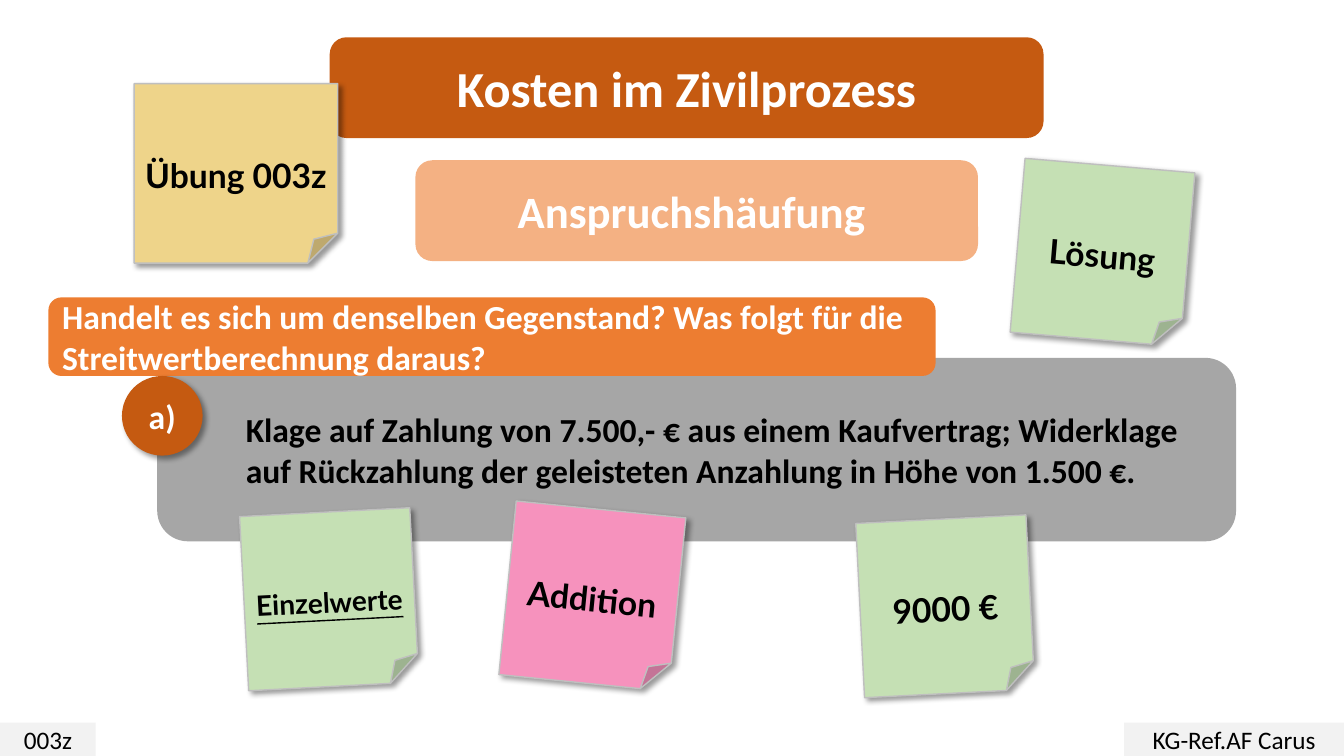
"""Build the slide on litigation costs and joined claims."""
from dataclasses import dataclass

from lxml import etree
from pptx import Presentation
from pptx.dml.color import RGBColor
from pptx.enum import shapes, text
from pptx.oxml import ns
from pptx.util import Inches, Pt


@dataclass(frozen=True)
class Theme:
    white: str = "FFFFFF"
    black: str = "000000"
    rust: str = "C55A11"
    peach: str = "F4B183"
    orange: str = "ED7D31"
    grey: str = "A6A6A6"
    footer: str = "F2F2F2"
    edge: str = "BFBFBF"
    yellow: str = "EED48A"
    green: str = "C5E0B4"
    pink: str = "F692BD"
    body_font: str = "Calibri"
    note_font: str = "Lato"
    title: int = 36
    subtitle: int = 32
    body: int = 24
    small: int = 20
    footnote: int = 18


theme = Theme()
kinds = shapes.MSO_SHAPE
center, left_align = text.PP_ALIGN.CENTER, text.PP_ALIGN.LEFT

presentation = Presentation()
presentation.slide_width, presentation.slide_height = Inches(13.33), Inches(7.5)
slide = presentation.slides.add_slide(presentation.slide_layouts[6])


def add_label(kind, box, fill, words, size, color, bold=True, align=center, font=theme.body_font):
    shape = slide.shapes.add_shape(kind, *map(Inches, box))
    shape.shadow.inherit = False
    shape.fill.solid()
    shape.fill.fore_color.rgb = RGBColor.from_string(fill)
    shape.line.fill.background()
    frame = shape.text_frame
    frame.word_wrap = True
    frame.vertical_anchor = text.MSO_ANCHOR.MIDDLE
    frame.text = words
    paragraph = frame.paragraphs[0]
    paragraph.alignment = align
    run_font = paragraph.runs[0].font
    run_font.name, run_font.size, run_font.bold = font, Pt(size), bold
    run_font.color.rgb = RGBColor.from_string(color)
    return shape


def add_shadow(shape):
    effects = shape._element.spPr.find(ns.qn("a:effectLst"))
    shadow = etree.SubElement(effects, ns.qn("a:outerShdw"), blurRad=str(Pt(4)),
                              dist=str(Pt(3)), dir="2700000", algn="tl", rotWithShape="0")
    color = etree.SubElement(shadow, ns.qn("a:srgbClr"), val=theme.black)
    etree.SubElement(color, ns.qn("a:alpha"), val="40000")


case = add_label(kinds.ROUNDED_RECTANGLE, (1.56, 3.55, 10.7, 1.82), theme.grey,
                 "Klage auf Zahlung von 7.500,- € aus einem Kaufvertrag; Widerklage auf "
                 "Rückzahlung der geleisteten Anzahlung in Höhe von 1.500 €.",
                 theme.body, theme.black, align=left_align)
case.text_frame.margin_left = Inches(0.79)

add_label(kinds.ROUNDED_RECTANGLE, (3.27, 0.37, 7.08, 1), theme.rust,
          "Kosten im Zivilprozess", theme.title, theme.white)
add_label(kinds.ROUNDED_RECTANGLE, (4.12, 1.59, 5.58, 1), theme.peach,
          "Anspruchshäufung ", theme.subtitle, theme.white)
add_label(kinds.ROUNDED_RECTANGLE, (0.48, 2.95, 8.8, 0.78), theme.orange,
          "Handelt es sich um denselben Gegenstand? Was folgt für die "
          "Streitwertberechnung daraus?", theme.body, theme.white, align=left_align)

for left, width, words in [(0, 0.95, "003z"), (11.15, 2.18, "KG-Ref.AF Carus")]:
    add_label(kinds.RECTANGLE, (left, 7.17, width, 0.33), theme.footer,
              words, theme.footnote, theme.black, bold=False)

badge = add_label(kinds.OVAL, (1.21, 3.73, 0.8, 0.79), theme.rust,
                  "a)", theme.body, theme.white)
add_shadow(badge)

note_size = (1.69, 1.73)
notes = [
    ("Übung 003z", (1.33, 0.83, 2.02, 1.78), 0, theme.yellow, theme.body),
    ("Lösung", (10.09, 1.64, *note_size), 4.9, theme.green, theme.body),
    ("Einzelwerte", (2.42, 5.08, *note_size), 357, theme.green, theme.small),
    ("Addition", (5.03, 5.05, *note_size), 5.7, theme.pink, theme.body),
    ("9000 €", (8.53, 5.15, *note_size), 357.1, theme.green, theme.body),
]
for words, box, angle, fill, size in notes:
    note = add_label(kinds.FOLDED_CORNER, box, fill, words, size, theme.black,
                     font=theme.note_font)
    note.rotation = angle
    note.line.color.rgb = RGBColor.from_string(theme.edge)
    note.line.width = Pt(1)
    note.text_frame.margin_top = Inches(0.38)
    note.text_frame.margin_left = note.text_frame.margin_right = Inches(0.05)
    note.text_frame.paragraphs[0].runs[0].font.underline = words == "Einzelwerte"
    add_shadow(note)

presentation.save("out.pptx")
